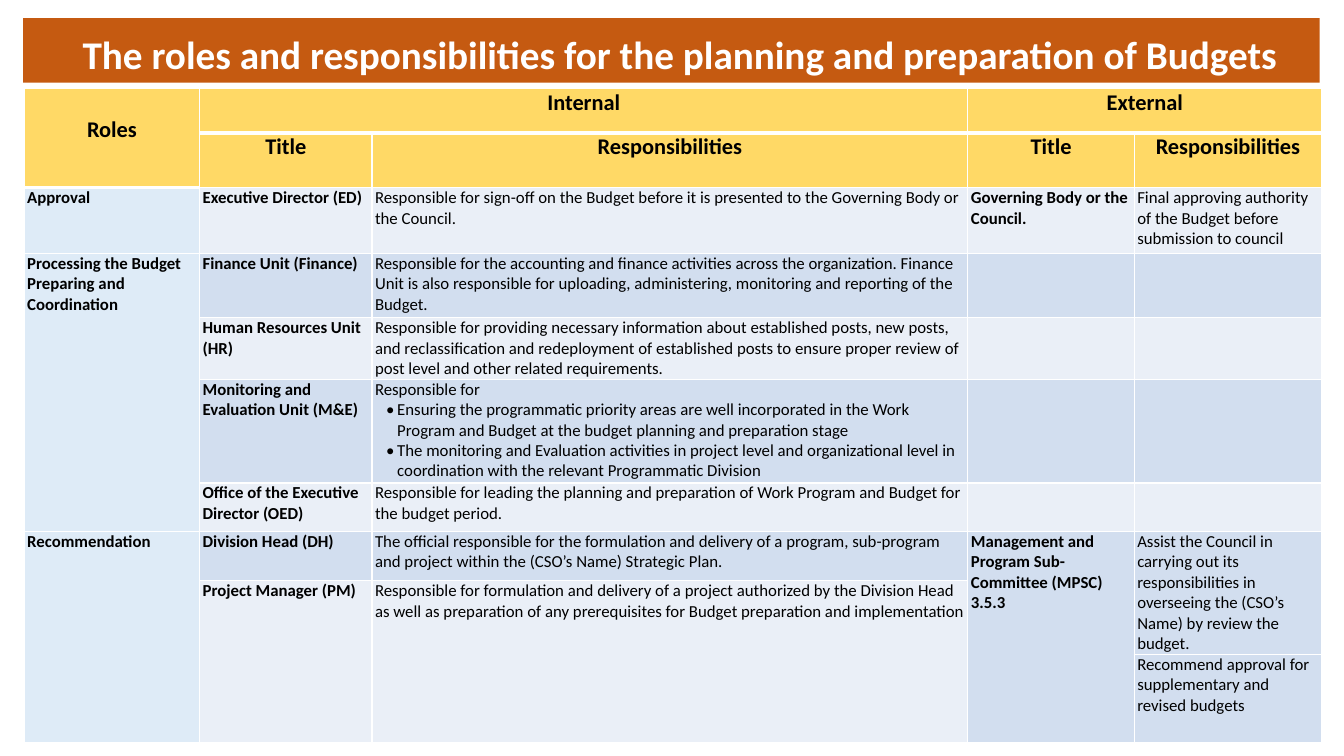
from lxml import etree
from pptx import Presentation
from pptx.dml.color import RGBColor
from pptx.enum.text import MSO_ANCHOR, MSO_AUTO_SIZE, PP_ALIGN
from pptx.oxml.ns import qn
from pptx.util import Pt

CENTER, LEFT = PP_ALIGN.CENTER, PP_ALIGN.LEFT
MIDDLE, NO_AUTOFIT = MSO_ANCHOR.MIDDLE, MSO_AUTO_SIZE.NONE
PX = 9144  # EMU per px, 100 px to the inch

THEME = {
    "font": "Calibri",
    "title_size": 28, "head_size": 16, "body_size": 12,
    "banner": "C55A11", "white": "FFFFFF", "black": "000000",
    "head": "FFD966", "role": "DEEBF7", "light": "EAEFF7", "dark": "D2DEEF",
}


def style_text(p, size, color, bold, align):
    p.alignment = align
    for r in p.runs:
        r.font.name = THEME["font"]
        r.font.size = Pt(size)
        r.font.bold = bold
        r.font.color.rgb = RGBColor.from_string(THEME[color])


def add_border(cell, side, width):
    ln = etree.SubElement(cell._tc.get_or_add_tcPr(), qn(f"a:ln{side}"), w=str(Pt(width)))
    fill = etree.SubElement(ln, qn("a:solidFill"))
    etree.SubElement(fill, qn("a:srgbClr"), val=THEME["white"])


prs = Presentation()
prs.slide_width, prs.slide_height = 1333 * PX, 750 * PX
s = prs.slides.add_slide(prs.slide_layouts[5])

# Title banner
sp = s.shapes.title
sp.left, sp.top, sp.width, sp.height = (n * PX for n in (23, 18, 1286, 64))
sp.fill.solid()
sp.fill.fore_color.rgb = RGBColor.from_string(THEME["banner"])
tf = sp.text_frame
tf.text = "The roles and responsibilities for the planning and preparation of Budgets"
tf.word_wrap, tf.auto_size, tf.vertical_anchor = True, NO_AUTOFIT, MIDDLE
tf.margin_left, tf.margin_right = 26 * PX, 10 * PX
tf.margin_top = tf.margin_bottom = 5 * PX
tf.paragraphs[0].line_spacing = 1.15
style_text(tf.paragraphs[0], THEME["title_size"], "white", True, CENTER)

# Table content: one list per row, "" where a cell is empty or merged away
ROWS = [
    ["Roles", "Internal", "", "External", ""],
    ["", "Title", "Responsibilities", "Title", "Responsibilities"],
    ["Approval", "Executive Director (ED)",
     "Responsible for sign-off on the Budget before it is presented to the "
     "Governing Body or the Council.",
     "Governing Body or the Council.",
     "Final approving authority of the Budget before submission to council"],
    ["Processing the Budget Preparing and Coordination", "Finance Unit (Finance)",
     "Responsible for the accounting and finance activities across the organization. "
     "Finance Unit is also responsible for uploading, administering, monitoring and "
     "reporting of the Budget.", "", ""],
    ["", "Human Resources Unit (HR)",
     "Responsible for providing necessary information about established posts, new posts, "
     "and reclassification and redeployment of established posts to ensure proper review "
     "of post level and other related requirements.", "", ""],
    ["", "Monitoring and Evaluation Unit (M&E)",
     "Responsible for\n"
     "Ensuring the programmatic priority areas are well incorporated in the Work Program "
     "and Budget at the budget planning and preparation stage\n"
     "The monitoring and Evaluation activities in project level and organizational level "
     "in coordination with the relevant Programmatic Division", "", ""],
    ["", "Office of the Executive Director (OED)",
     "Responsible for leading the planning and preparation of Work Program and Budget "
     "for the budget period.", "", ""],
    ["Recommendation", "Division Head (DH)",
     "The official responsible for the formulation and delivery of a program, sub-program "
     "and project within the (CSO’s Name) Strategic Plan.",
     "Management and Program Sub-Committee (MPSC) 3.5.3",
     "Assist the Council in carrying out its responsibilities in overseeing the "
     "(CSO’s Name) by review the budget."],
    ["", "Project Manager (PM)",
     "Responsible for formulation and delivery of a project authorized by the Division Head "
     "as well as preparation of any prerequisites for Budget preparation and implementation",
     "", ""],
    ["", "", "", "", "Recommend approval for supplementary and revised budgets"],
]
COL_WIDTHS = [174, 171, 591, 165, 186]
ROW_HEIGHTS = [44, 45, 65, 64, 58, 103, 48, 49, 24, 88]
MERGES = [  # first row, first column, last row, last column
    (0, 0, 1, 0), (0, 1, 0, 2), (0, 3, 0, 4), (3, 0, 6, 0), (7, 0, 9, 0),
    (7, 3, 9, 3), (7, 4, 8, 4), (8, 1, 9, 1), (8, 2, 9, 2),
]
HEAD_ROWS = 2
BOLD_COLS = (0, 1, 3)

# Table grid
table = s.shapes.add_table(len(ROWS), len(COL_WIDTHS), 24 * PX, 88 * PX,
                           sum(COL_WIDTHS) * PX, sum(ROW_HEIGHTS) * PX).table
table.first_row = table.horz_banding = False
for col, width in zip(table.columns, COL_WIDTHS):
    col.width = width * PX
for row, height in zip(table.rows, ROW_HEIGHTS):
    row.height = height * PX
for r0, c0, r1, c1 in MERGES:
    table.cell(r0, c0).merge(table.cell(r1, c1))

# Table cells
for i, texts in enumerate(ROWS):
    for j, text in enumerate(texts):
        cell = table.cell(i, j)
        is_head = i < HEAD_ROWS
        cell.margin_left = cell.margin_right = 3 * PX
        cell.margin_top = cell.margin_bottom = 0
        for side in "LRTB":
            thick = (i == 0 and side == "B") or (i == 1 and j > 0 and side == "T")
            add_border(cell, side, 3 if thick else 1)
        if is_head:
            fill = "head"
        elif j == 0:
            fill = "role"
        else:
            # Bands alternate; the last row's visible cell continues the dark band
            fill = "dark" if i % 2 else "light"
            if i == len(ROWS) - 1:
                fill = "dark"
        cell.fill.solid()
        cell.fill.fore_color.rgb = RGBColor.from_string(THEME[fill])
        if not text:
            continue
        cell.text_frame.text = text
        for k, p in enumerate(cell.text_frame.paragraphs):
            style_text(p, THEME["head_size" if is_head else "body_size"], "black",
                       is_head or j in BOLD_COLS, CENTER if is_head else LEFT)
            if k > 0:  # bulleted duties below the lead-in line
                pPr = p._p.get_or_add_pPr()
                pPr.set("marL", str(22 * PX))
                pPr.set("indent", str(-11 * PX))
                etree.SubElement(pPr, qn("a:buFont"), typeface=THEME["font"])
                etree.SubElement(pPr, qn("a:buChar"), char="•")

# "Roles" sits lower in its two-row cell
table.cell(0, 0).margin_top = 27 * PX

prs.save("out.pptx")
